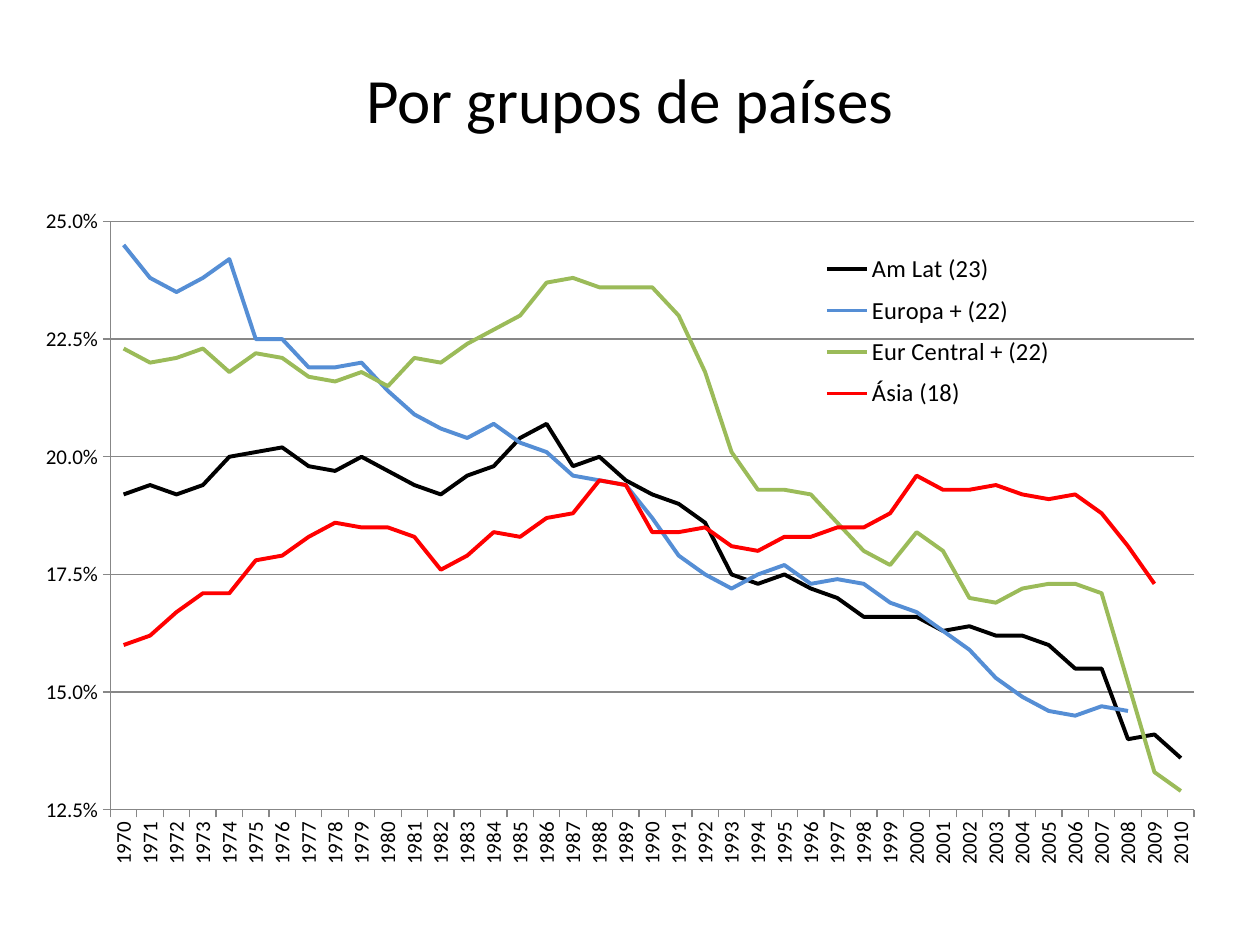
from lxml import etree
from pptx import Presentation
from pptx.chart.data import CategoryChartData
from pptx.dml.color import RGBColor
from pptx.enum.chart import XL_CHART_TYPE, XL_LEGEND_POSITION, XL_MARKER_STYLE, XL_TICK_MARK
from pptx.enum.text import MSO_ANCHOR, PP_ALIGN
from pptx.oxml.ns import qn
from pptx.util import Pt

EMU_PER_PX = 914400 / 126
LINE_CHART = XL_CHART_TYPE.LINE
LEGEND_RIGHT = XL_LEGEND_POSITION.RIGHT
NO_MARKER = XL_MARKER_STYLE.NONE
TICK_OUTSIDE, TICK_NONE = XL_TICK_MARK.OUTSIDE, XL_TICK_MARK.NONE
MIDDLE, CENTER = MSO_ANCHOR.MIDDLE, PP_ALIGN.CENTER


class Theme:
    font = "Calibri"
    text = "000000"
    axis = "878787"
    title_size = 36
    axis_size = 12
    legend_size = 14
    axis_width = 0.75
    series_width = 2.25


YEARS = range(1970, 2011)

# Country group: colour, values in tenths of a percent from 1970 on
GROUPS = {
    "Am Lat (23)": ("000000", [
        192, 194, 192, 194, 200, 201, 202, 198, 197, 200,
        197, 194, 192, 196, 198, 204, 207, 198, 200, 195,
        192, 190, 186, 175, 173, 175, 172, 170, 166, 166,
        166, 163, 164, 162, 162, 160, 155, 155, 140, 141, 136]),
    "Europa + (22)": ("558ED5", [
        245, 238, 235, 238, 242, 225, 225, 219, 219, 220,
        214, 209, 206, 204, 207, 203, 201, 196, 195, 194,
        187, 179, 175, 172, 175, 177, 173, 174, 173, 169,
        167, 163, 159, 153, 149, 146, 145, 147, 146, None, None]),
    "Eur Central + (22)": ("9BBB59", [
        223, 220, 221, 223, 218, 222, 221, 217, 216, 218,
        215, 221, 220, 224, 227, 230, 237, 238, 236, 236,
        236, 230, 218, 201, 193, 193, 192, 186, 180, 177,
        184, 180, 170, 169, 172, 173, 173, 171, 152, 133, 129]),
    "Ásia (18)": ("FF0000", [
        160, 162, 167, 171, 171, 178, 179, 183, 186, 185,
        185, 183, 176, 179, 184, 183, 187, 188, 195, 194,
        184, 184, 185, 181, 180, 183, 183, 185, 185, 188,
        196, 193, 193, 194, 192, 191, 192, 188, 181, 173, None]),
}


def px(length):
    return round(length * EMU_PER_PX)


def style_font(font, size):
    font.name = Theme.font
    font.size = Pt(size)
    font.bold = False
    font.color.rgb = RGBColor.from_string(Theme.text)


def style_line(line, color, width):
    line.color.rgb = RGBColor.from_string(color)
    line.width = Pt(width)


def add_title(slide, text, *box):
    frame = slide.shapes.add_textbox(*map(px, box)).text_frame
    frame.word_wrap = True
    frame.vertical_anchor = MIDDLE
    frame.text = text
    heading = frame.paragraphs[0]
    heading.alignment = CENTER
    style_font(heading.runs[0].font, Theme.title_size)


def set_layout(parent, index, x, y, w, h, inner=False):
    """Place a chart part by fractions of the chart area."""
    for old_layout in parent.findall(qn("c:layout")):
        parent.remove(old_layout)
    layout = etree.Element(qn("c:layout"))
    parent.insert(index, layout)
    manual = etree.SubElement(layout, qn("c:manualLayout"))
    settings = [("layoutTarget", "inner")] if inner else []
    settings += [("xMode", "edge"), ("yMode", "edge"),
                 ("x", x), ("y", y), ("w", w), ("h", h)]
    for tag, value in settings:
        etree.SubElement(manual, qn(f"c:{tag}")).set("val", str(value))


def style_axis(axis):
    axis.major_tick_mark = TICK_OUTSIDE
    axis.minor_tick_mark = TICK_NONE
    style_font(axis.tick_labels.font, Theme.axis_size)
    style_line(axis.format.line, Theme.axis, Theme.axis_width)


def style_year_axis(axis):
    style_axis(axis)
    axis.has_major_gridlines = False
    body = axis._element.find(f"{qn('c:txPr')}/{qn('a:bodyPr')}")
    body.set("rot", "-5400000")
    body.set("vert", "horz")


def style_share_axis(axis):
    style_axis(axis)
    axis.minimum_scale, axis.maximum_scale = 0.125, 0.25
    axis.major_unit = 0.025
    axis.tick_labels.number_format = "0.0%"
    axis.tick_labels.number_format_is_linked = False
    axis.has_major_gridlines = True
    style_line(axis.major_gridlines.format.line, Theme.axis, Theme.axis_width)


def add_legend(chart):
    chart.has_legend = True
    legend = chart.legend
    legend.position = LEGEND_RIGHT
    legend.include_in_layout = True
    style_font(legend.font, Theme.legend_size)
    set_layout(legend._element, 1, 0.65, 0.08, 0.21, 0.25)


def add_group_chart(slide, *box):
    chart_data = CategoryChartData(number_format="0.0%")
    chart_data.categories = [str(year) for year in YEARS]
    for group, (_, shares) in GROUPS.items():
        chart_data.add_series(
            group, [None if share is None else share / 1000 for share in shares])
    chart = slide.shapes.add_chart(LINE_CHART, *map(px, box), chart_data).chart
    chart.has_title = False
    style_font(chart.font, Theme.axis_size)

    # Axes and plot area
    style_year_axis(chart.category_axis)
    style_share_axis(chart.value_axis)
    plot_area = chart._chartSpace.chart.plotArea
    set_layout(plot_area, 0, 0.06, 0.05, 0.91, 0.83, inner=True)

    # One line per country group
    chart.plots[0].vary_by_categories = False
    for series, (color, _) in zip(chart.plots[0].series, GROUPS.values()):
        series.smooth = False
        series.marker.style = NO_MARKER
        style_line(series.format.line, color, Theme.series_width)

    add_legend(chart)


def main():
    deck = Presentation()
    deck.slide_width, deck.slide_height = px(1260), px(945)
    slide = deck.slides.add_slide(deck.slide_layouts[6])
    add_title(slide, "Por grupos de países", 63, 38, 1134, 120)
    add_group_chart(slide, 39, 186, 1191, 709)
    deck.save("out.pptx")


if __name__ == "__main__":
    main()
